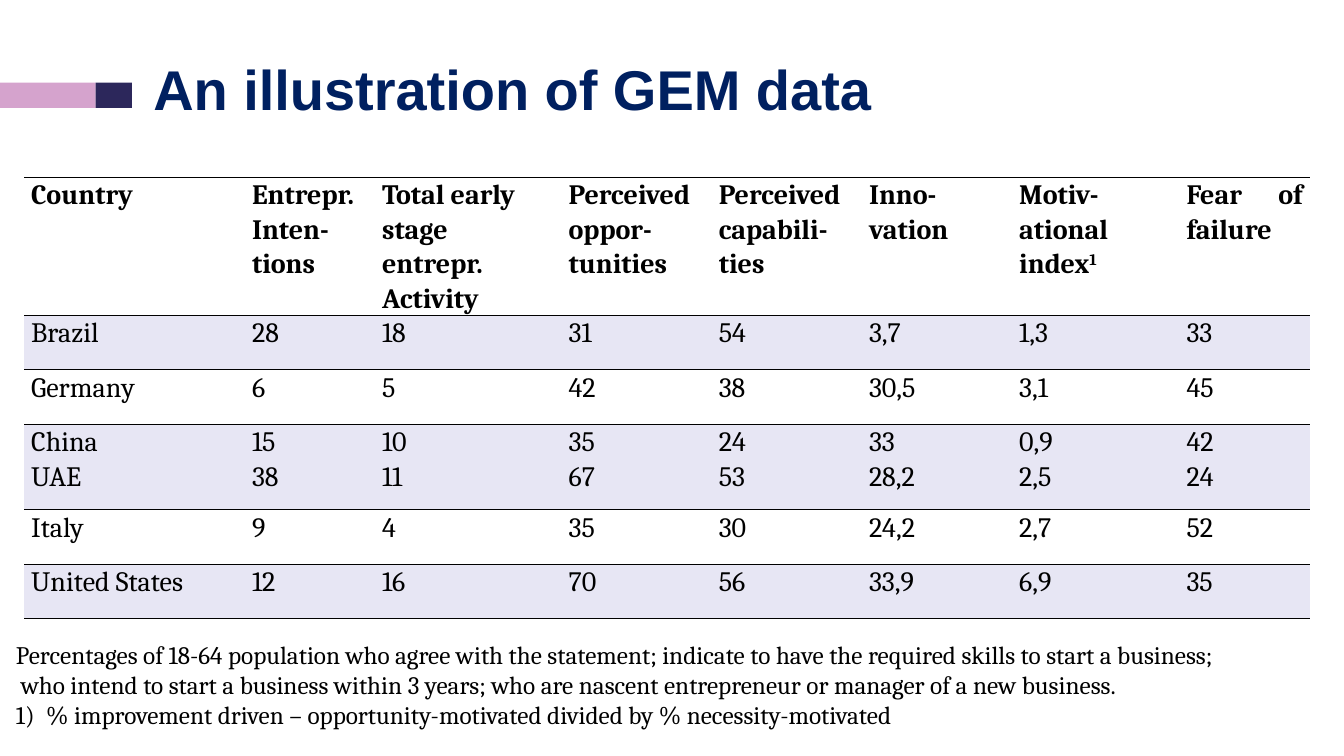
"""Build a slide with a table of GEM data by country."""
from lxml import etree
from pptx import Presentation
from pptx.dml.color import RGBColor
from pptx.enum.shapes import MSO_SHAPE
from pptx.enum.text import MSO_ANCHOR, MSO_AUTO_SIZE, PP_ALIGN
from pptx.oxml.ns import qn
from pptx.util import Inches, Pt

RECT = MSO_SHAPE.RECTANGLE
MIDDLE = MSO_ANCHOR.MIDDLE
FIXED = MSO_AUTO_SIZE.NONE
LEFT, JUSTIFY = PP_ALIGN.LEFT, PP_ALIGN.JUSTIFY


def style(font, size, face, color, bold=False):
    font.size, font.name, font.bold = Pt(size), face, bold
    font.color.rgb = RGBColor.from_string(color)


def border(cell, side, color=None):
    line = etree.SubElement(cell._tc.get_or_add_tcPr(), qn("a:ln" + side), w=str(Pt(1)))
    if color:
        fill = etree.SubElement(line, qn("a:solidFill"))
        etree.SubElement(fill, qn("a:srgbClr"), val=color)
    else:
        etree.SubElement(line, qn("a:noFill"))


deck = Presentation()
deck.slide_width, deck.slide_height = Inches(13.33), Inches(7.5)
slide = deck.slides.add_slide(deck.slide_layouts[5])

for left, width, color in [(0, 0.95, "D5A3CD"), (0.95, 0.36, "2C275B")]:
    bar = slide.shapes.add_shape(RECT, Inches(left), Inches(0.82), Inches(width), Inches(0.25))
    bar.shadow.inherit = False
    bar.fill.solid()
    bar.fill.fore_color.rgb = RGBColor.from_string(color)
    bar.line.fill.background()

title = slide.shapes.title
title.left, title.top = Inches(1.42), Inches(0.43)
title.width, title.height = Inches(11.5), Inches(0.98)
frame = title.text_frame
frame.text = "An illustration of GEM data"
frame.auto_size, frame.vertical_anchor = FIXED, MIDDLE
heading = frame.paragraphs[0]
heading.alignment, heading.line_spacing = LEFT, 0.9
style(heading.font, 40, "Arial", "002060", True)

rows = [
    ["Country", "Entrepr. Inten-tions", "Total early stage entrepr.\nActivity",
     "Perceived oppor-tunities", "Perceived capabili-ties", "Inno-vation",
     "Motiv-ational index", "Fear of failure"],
    ["Brazil", "28", "18", "31", "54", "3,7", "1,3", "33"],
    ["Germany", "6", "5", "42", "38", "30,5", "3,1", "45"],
    ["China\nUAE", "15\n38", "10\n11", "35\n67", "24\n53", "33\n28,2", "0,9\n2,5", "42\n24"],
    ["Italy", "9", "4", "35", "30", "24,2", "2,7", "52"],
    ["United States", "12", "16", "70", "56", "33,9", "6,9", "35"],
]
widths = [2.19, 1.29, 1.85, 1.49, 1.49, 1.49, 1.66, 1.29]
heights = [0.87, 0.54, 0.54, 0.85, 0.54, 0.54]
table = slide.shapes.add_table(len(rows), len(widths), Inches(0.24), Inches(1.76),
                               Inches(sum(widths)), Inches(sum(heights))).table
table.first_row = table.horz_banding = False
for col, width in zip(table.columns, widths):
    col.width = Inches(width)
for r, (texts, height) in enumerate(zip(rows, heights)):
    table.rows[r].height = Inches(height)
    for c, text in enumerate(texts):
        cell = table.cell(r, c)
        cell.text = text
        cell.margin_left = cell.margin_right = Inches(0.07)
        cell.margin_top = cell.margin_bottom = 0
        for side, color in [("L", None), ("R", None), ("T", "000000"), ("B", "000000")]:
            border(cell, side, color)
        if r % 2:
            cell.fill.solid()
            cell.fill.fore_color.rgb = RGBColor.from_string("E7E6F4")
        else:
            cell.fill.background()
        for para in cell.text_frame.paragraphs:
            para.alignment = LEFT if (r, c) == (0, 2) else JUSTIFY
            para.line_spacing = 1.07
            style(para.font, 20, "Cambria", "000000", r == 0)

mark = table.cell(0, 6).text_frame.paragraphs[0].add_run()
mark.text = "1"
mark._r.get_or_add_rPr().set("baseline", "30000")

notes = [
    ("Percentages of 18-64 population who agree with the statement; "
     "indicate to have the required skills to start a business;", 0, 0),
    ("who intend to start a business within 3 years; "
     "who are nascent entrepreneur or manager of a new business.", 0.05, 0),
    ("1)\t% improvement driven – opportunity-motivated divided by % necessity-motivated",
     0.3, -0.3),
]
box = slide.shapes.add_textbox(Inches(0.06), Inches(6.29), Inches(12.86), Inches(1.2))
box.text_frame.word_wrap = True
box.text_frame.text = "\n".join(text for text, _, _ in notes)
for para, (_, margin, indent) in zip(box.text_frame.paragraphs, notes):
    props = para._p.get_or_add_pPr()
    props.set("marL", str(Inches(margin)))
    props.set("indent", str(Inches(indent)))
    style(para.font, 18, "Cambria", "000000")

deck.save("out.pptx")
